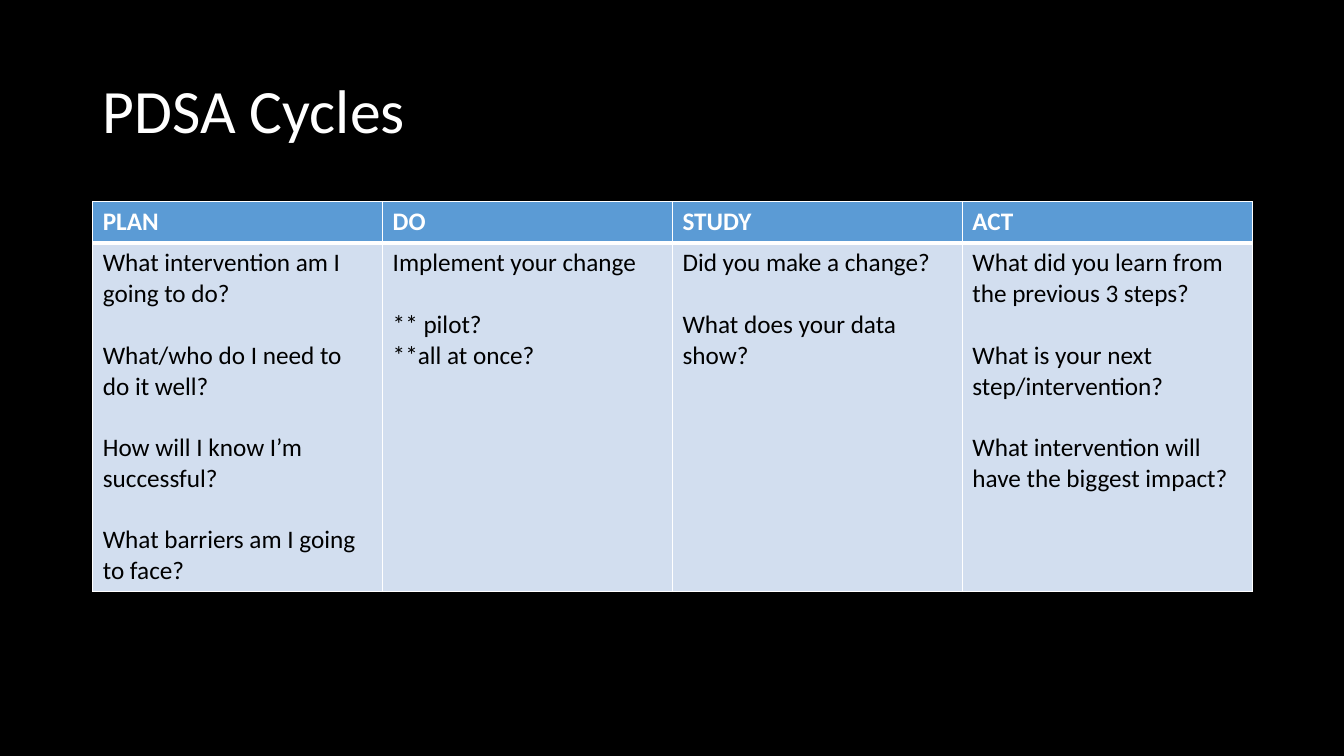
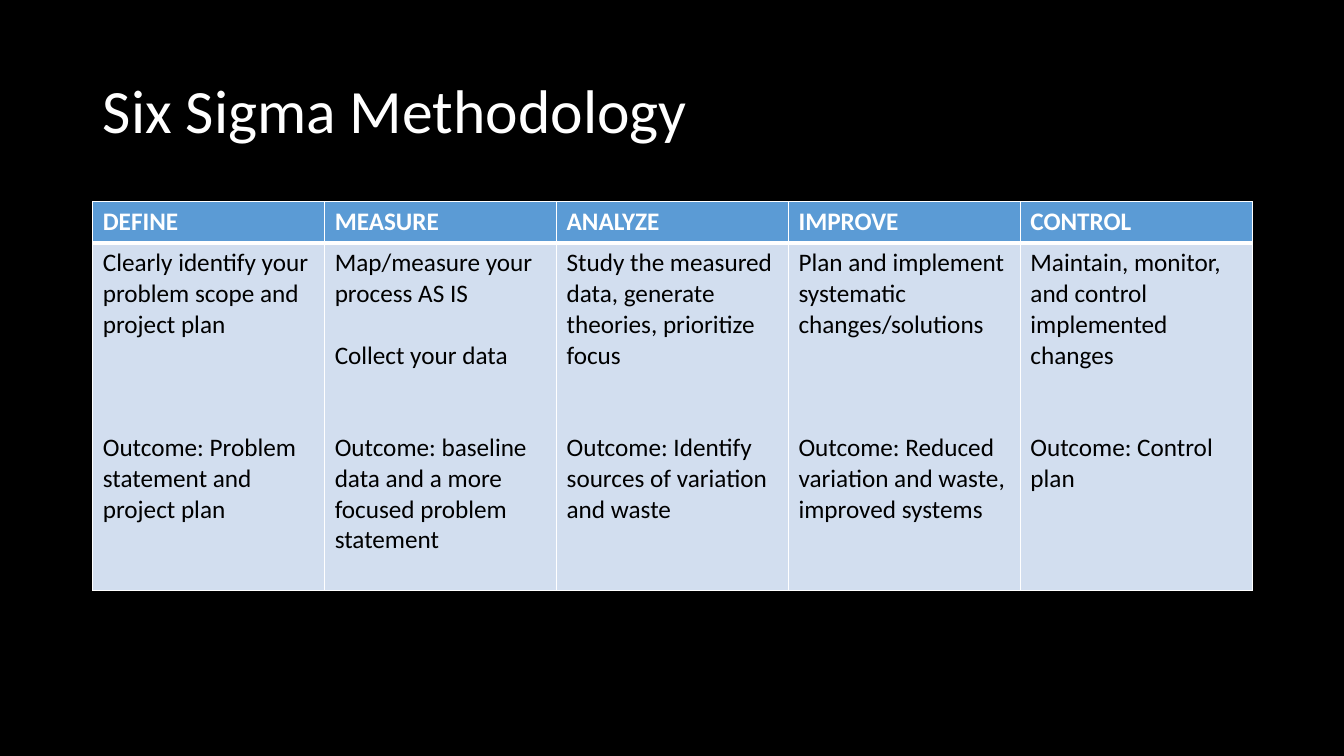
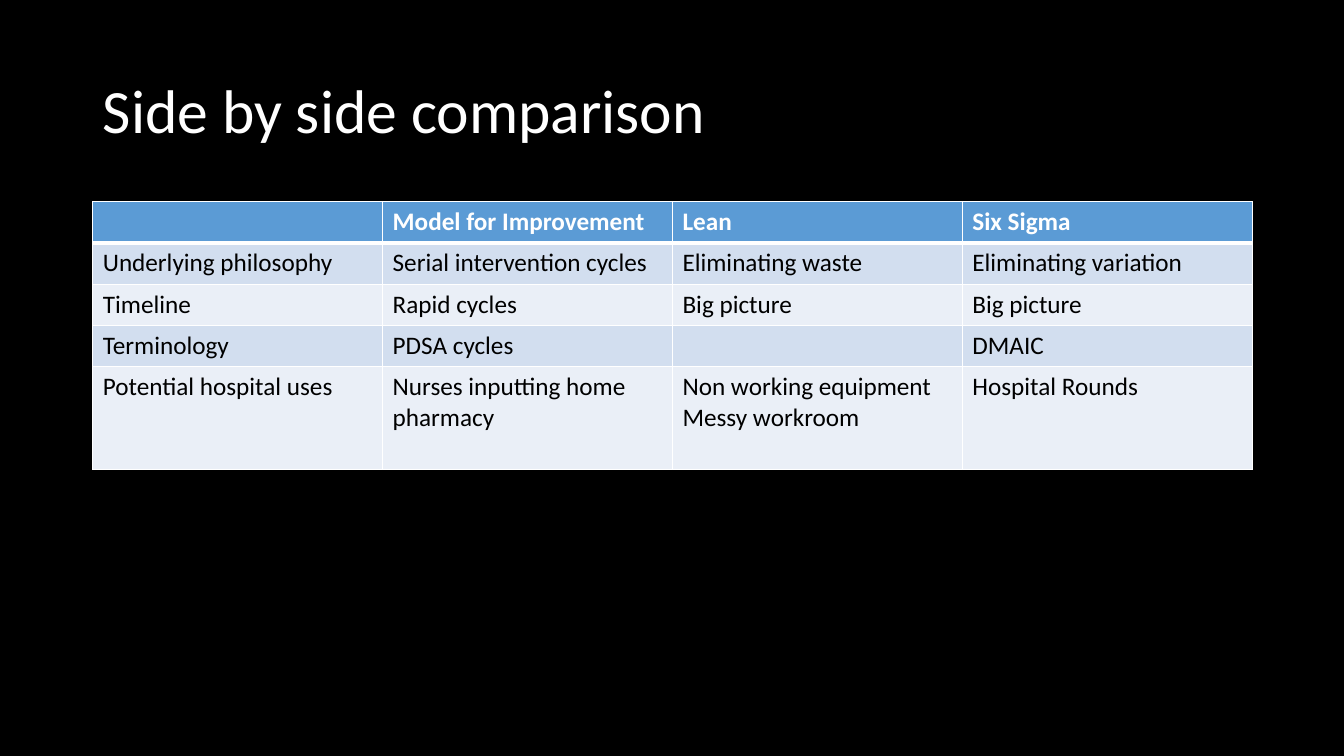
"""Build three slides that compare quality improvement methods in tables."""
from dataclasses import dataclass

from lxml import etree
from pptx import Presentation
from pptx.dml import color
from pptx.enum import text
from pptx.oxml import ns
from pptx.util import Inches, Pt

FONT = "Calibri"
BLACK, WHITE = "000000", "FFFFFF"
HEADER, BANDS = "5B9BD5", ("D2DEEF", "EAEFF7")
LEFT, WIDTH = 0.92, 11.5
TABLE_TOP, ROW_HEIGHT = 2, 0.41
TITLE_SIZE, CELL_SIZE, LINE_PITCH = 44, 18, 22
THIN, THICK = 1, 3


@dataclass
class Para:
    """A paragraph and the number of lines left free above it."""
    text: str
    gap: int = 0


@dataclass
class TableSlide:
    """A title, a header row, the body rows and the height of the last row."""
    title: str
    headers: list[str]
    rows: list[list[list[Para]]]
    last_height: float


def spaced(*lines: str, gap: int = 1) -> list[Para]:
    """Return paragraphs with the same gap between them."""
    return [Para(line, gap if i else 0) for i, line in enumerate(lines)]


SLIDES = [
    TableSlide("PDSA Cycles", ["PLAN", "DO", "STUDY", "ACT"], [[
        spaced("What intervention am I going to do?",
               "What/who do I need to do it well?",
               "How will I know I’m successful?",
               "What barriers am I going to face?"),
        [Para("Implement your change"), Para("** pilot?", 1), Para("**all at once?")],
        spaced("Did you make a change?", "What does your data show?"),
        spaced("What did you learn from the previous 3 steps?",
               "What is your next step/intervention?",
               "What intervention will have the biggest impact?"),
    ]], 3.45),
    TableSlide("Six Sigma Methodology",
               ["DEFINE", "MEASURE", "ANALYZE", "IMPROVE", "CONTROL"], [[
        spaced("Clearly identify your problem scope and project plan",
               "Outcome: Problem statement and project plan", gap=3),
        [Para("Map/measure your process AS IS"), Para("Collect your data", 1),
         Para("Outcome: baseline data and a more focused problem statement", 2)],
        spaced("Study the measured data, generate theories, prioritize focus",
               "Outcome: Identify sources of variation and waste", gap=2),
        spaced("Plan and implement systematic changes/solutions",
               "Outcome: Reduced variation and waste, improved systems", gap=3),
        spaced("Maintain, monitor, and control implemented changes",
               "Outcome: Control plan", gap=2),
    ]], 3.45),
    TableSlide("Side by side comparison",
               ["", "Model for Improvement", "Lean", "Six Sigma"], [
        [spaced("Underlying philosophy"), spaced("Serial intervention cycles"),
         spaced("Eliminating waste"), spaced("Eliminating variation")],
        [spaced("Timeline"), spaced("Rapid cycles"),
         spaced("Big picture"), spaced("Big picture")],
        [spaced("Terminology"), spaced("PDSA cycles"), spaced(""), spaced("DMAIC")],
        [spaced("Potential hospital uses"), spaced("Nurses inputting home pharmacy"),
         spaced("Non working equipment", "Messy workroom", gap=0),
         spaced("Hospital Rounds")],
    ], 1.02),
]


def paint(fill, hex_color: str) -> None:
    """Give a fill one solid colour."""
    fill.solid()
    fill.fore_color.rgb = color.RGBColor.from_string(hex_color)


def style(p, size: float, hex_color: str, bold: bool = False) -> None:
    """Format the font of a paragraph and its runs."""
    for font in [p.font, *(r.font for r in p.runs)]:
        font.name, font.size, font.bold = FONT, Pt(size), bold
        paint(font.fill, hex_color)


def add_borders(cell, top: float, bottom: float) -> None:
    """Draw white lines round a cell."""
    tc_pr = cell._tc.get_or_add_tcPr()
    for side, width in zip("LRTB", (THIN, THIN, top, bottom)):
        ln = etree.SubElement(tc_pr, ns.qn(f"a:ln{side}"), w=str(Pt(width)))
        fill = etree.SubElement(ln, ns.qn("a:solidFill"))
        etree.SubElement(fill, ns.qn("a:srgbClr"), val=WHITE)


def fill_cell(cell, paras: list[Para], row: int) -> None:
    """Write and format a cell according to its row."""
    is_header = row == 0
    add_borders(cell, THICK if row == 1 else THIN, THICK if is_header else THIN)
    paint(cell.fill, HEADER if is_header else BANDS[(row - 1) % 2])
    tf = cell.text_frame
    for i, para in enumerate(paras):
        p = tf.add_paragraph() if i else tf.paragraphs[0]
        p.text = para.text
        p.space_before = Pt(para.gap * LINE_PITCH)
        style(p, CELL_SIZE, WHITE if is_header else BLACK, is_header)


def add_title(s, title: str) -> None:
    """Place the title in its placeholder."""
    sp = s.shapes.title
    sp.left, sp.top, sp.width, sp.height = map(Inches, (LEFT, 0.4, WIDTH, 1.45))
    tf = sp.text_frame
    tf.text = title
    tf.auto_size = text.MSO_AUTO_SIZE.NONE
    tf.vertical_anchor = text.MSO_ANCHOR.MIDDLE
    p = tf.paragraphs[0]
    p.alignment = text.PP_ALIGN.LEFT
    p.line_spacing = 0.9
    style(p, TITLE_SIZE, WHITE)


def add_table(s, spec_slide: TableSlide) -> None:
    """Add the table with a header row and banded body rows."""
    rows = [[spaced(header) for header in spec_slide.headers], *spec_slide.rows]
    heights = [ROW_HEIGHT] * (len(rows) - 1) + [spec_slide.last_height]
    table = s.shapes.add_table(
        len(rows), len(spec_slide.headers), Inches(LEFT), Inches(TABLE_TOP),
        Inches(WIDTH), Inches(sum(heights))).table
    for r, (cells, height) in enumerate(zip(rows, heights)):
        table.rows[r].height = Inches(height)
        for c, paras in enumerate(cells):
            fill_cell(table.cell(r, c), paras, r)


def main() -> None:
    """Build and save the presentation."""
    prs = Presentation()
    prs.slide_width, prs.slide_height = Inches(13.33), Inches(7.5)
    paint(prs.slide_master.background.fill, BLACK)
    title_only = prs.slide_layouts[5]
    for table_slide in SLIDES:
        s = prs.slides.add_slide(title_only)
        add_title(s, table_slide.title)
        add_table(s, table_slide)
    prs.save("out.pptx")


if __name__ == "__main__":
    main()
